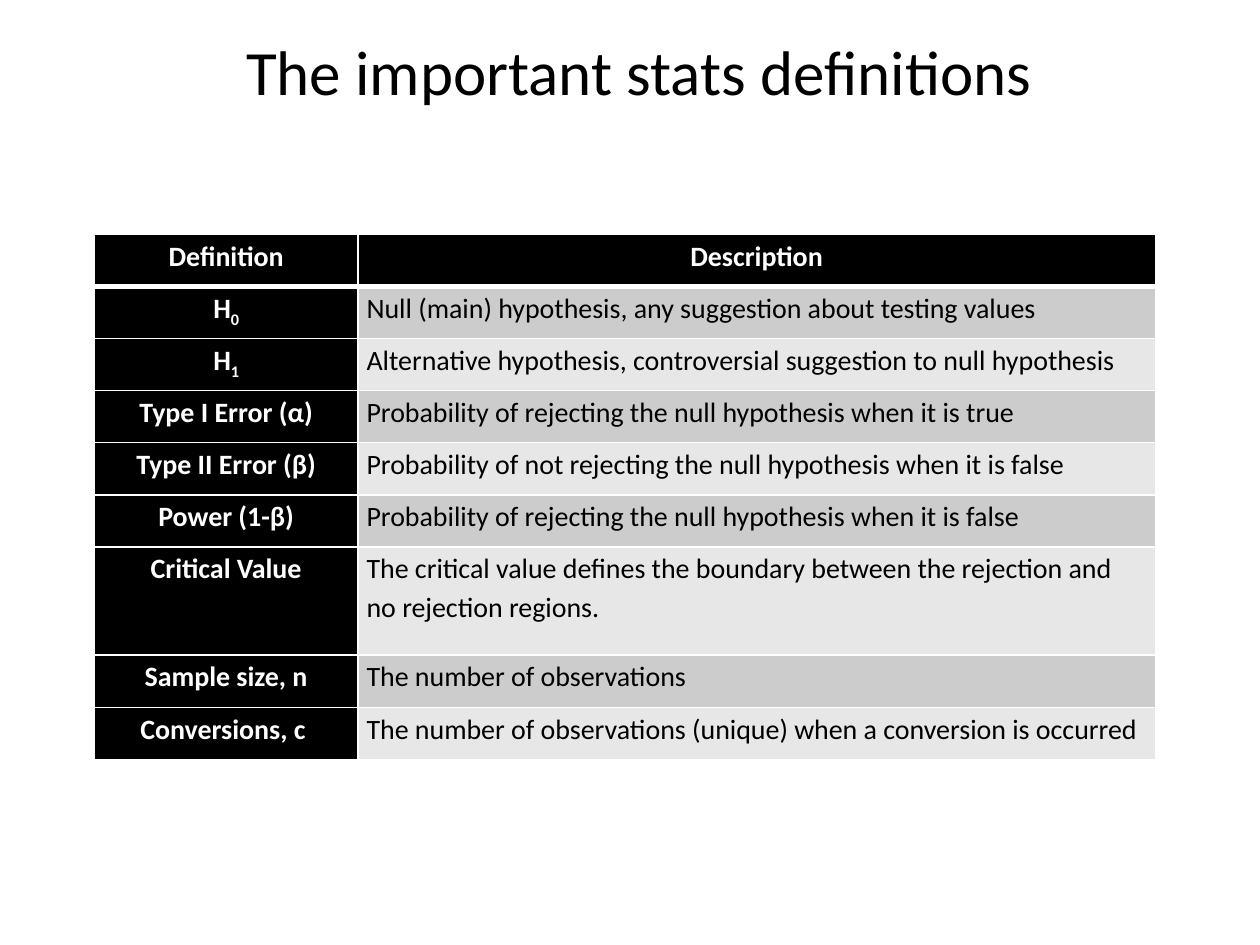
"""Build a slide with a table of important statistics definitions."""
from lxml import etree
from pptx import Presentation
from pptx.dml.color import RGBColor
from pptx.enum.text import MSO_ANCHOR, PP_ALIGN
from pptx.oxml.ns import qn
from pptx.util import Inches, Pt

COLORS = {"black": "000000", "white": "FFFFFF", "dark_band": "CCCCCC", "light_band": "E7E7E7"}
ROWS = [
    ("Definition", "Description"),
    ("H_0", "Null (main) hypothesis, any suggestion about testing values"),
    ("H_1", "Alternative hypothesis, controversial suggestion to null hypothesis"),
    ("Type I Error (α)", "Probability of rejecting the null hypothesis when it is true"),
    ("Type II Error (β)", "Probability of not rejecting the null hypothesis when it is false"),
    ("Power (1-β)", "Probability of rejecting the null hypothesis when it is false"),
    ("Critical Value", "The critical value defines the boundary between the rejection "
                       "and no rejection regions."),
    ("Sample size, n", "The number of observations"),
    ("Conversions, c ", "The number of observations (unique) when a conversion is occurred"),
]
TALL_ROW = 6
TABLE_HEIGHT, TALL_HEIGHT = 4.17, 0.86
ROW_HEIGHT = (TABLE_HEIGHT - TALL_HEIGHT) / (len(ROWS) - 1)


def style_font(font, size, color, bold=False):
    font.name = "Calibri"
    font.size = Pt(size)
    font.bold = bold
    font.color.rgb = RGBColor.from_string(COLORS[color])


def add_borders(cell, widths):
    properties = cell._tc.get_or_add_tcPr()
    for position, (side, width) in enumerate(widths.items()):
        line = etree.Element(qn(f"a:{side}"), w=str(Pt(width)))
        fill = etree.SubElement(line, qn("a:solidFill"))
        etree.SubElement(fill, qn("a:srgbClr"), val=COLORS["white"])
        properties.insert(position, line)


presentation = Presentation()
presentation.slide_width = Inches(10)
presentation.slide_height = Inches(7.5)
slide = presentation.slides.add_slide(presentation.slide_layouts[5])

title = slide.shapes.title
title.left, title.top = Inches(0.57), Inches(0.13)
title.width, title.height = Inches(9), Inches(0.85)
title.text_frame.text = "The important stats definitions"
title.text_frame.vertical_anchor = MSO_ANCHOR.MIDDLE
title_paragraph = title.text_frame.paragraphs[0]
title_paragraph.alignment = PP_ALIGN.CENTER
style_font(title_paragraph.runs[0].font, 36, "black")

table = slide.shapes.add_table(
    len(ROWS), 2, Inches(0.75), Inches(1.86), Inches(8.42), Inches(TABLE_HEIGHT)
).table
for column, width in zip(table.columns, (2.09, 6.33)):
    column.width = Inches(width)

for row_index, texts in enumerate(ROWS):
    table.rows[row_index].height = Inches(TALL_HEIGHT if row_index == TALL_ROW else ROW_HEIGHT)
    for column_index, text in enumerate(texts):
        cell = table.cell(row_index, column_index)
        heading = row_index == 0 or column_index == 0
        band = "dark_band" if row_index % 2 else "light_band"
        cell.fill.solid()
        cell.fill.fore_color.rgb = RGBColor.from_string(COLORS["black" if heading else band])
        cell.margin_left = cell.margin_right = Inches(0.07)
        cell.margin_top = cell.margin_bottom = 0
        add_borders(cell, {"lnL": 1, "lnR": 1, "lnT": 3 if row_index == 1 else 1,
                           "lnB": 3 if row_index == 0 else 1})

        paragraph = cell.text_frame.paragraphs[0]
        paragraph.alignment = PP_ALIGN.CENTER if heading else PP_ALIGN.LEFT
        paragraph.line_spacing = 1.15
        for part_index, part in enumerate(text.split("_")):
            run = paragraph.add_run()
            run.text = part
            style_font(run.font, 16, "white" if heading else "black", heading)
            if part_index:
                run._r.get_or_add_rPr().set("baseline", "-25000")

presentation.save("out.pptx")
